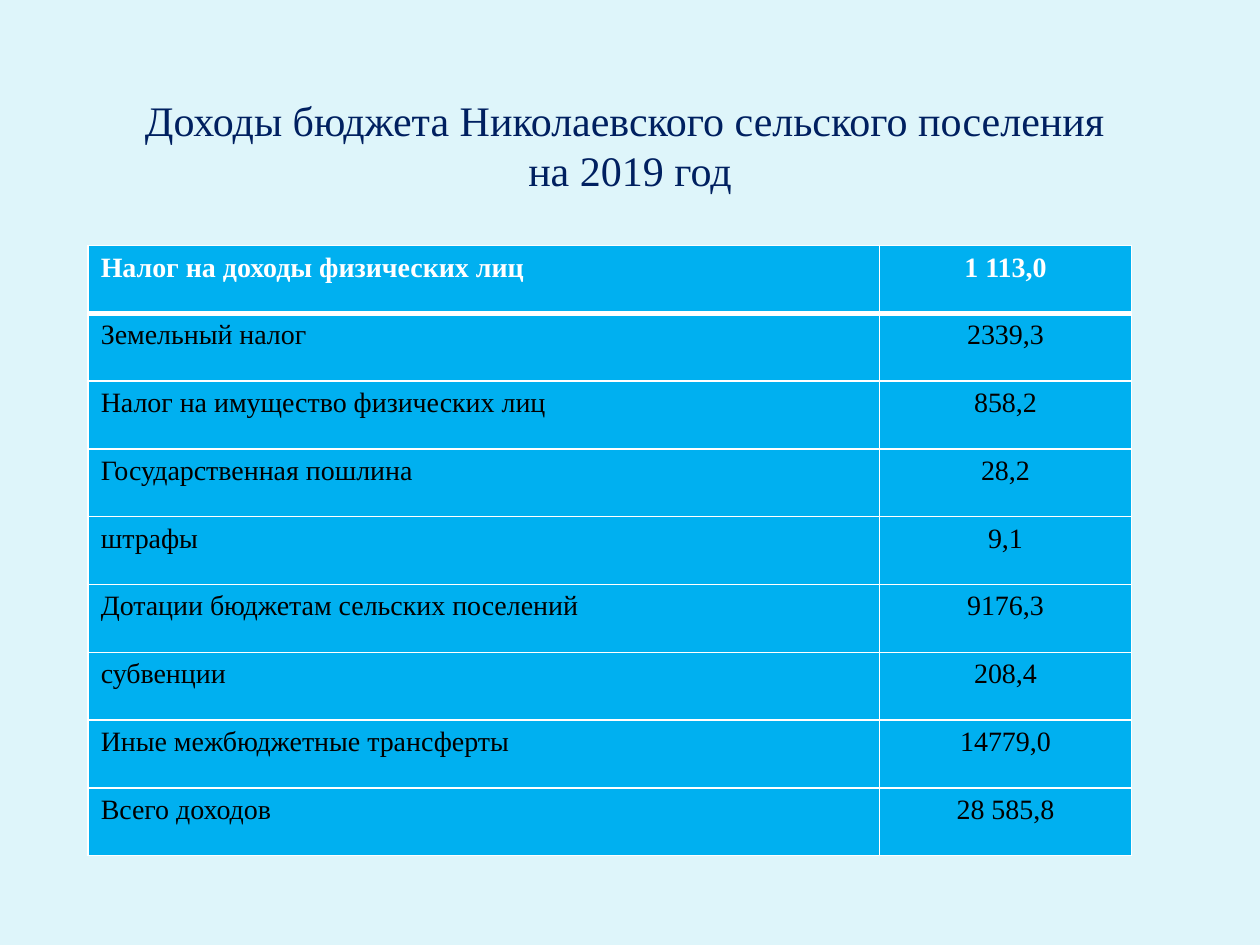
"""Build a slide with the 2019 budget revenue table of a rural settlement."""
from typing import NamedTuple

from lxml.etree import SubElement
from pptx import Presentation
from pptx.dml.color import RGBColor
from pptx.enum.text import MSO_ANCHOR, PP_ALIGN as Align
from pptx.oxml.ns import qn
from pptx.slide import Slide
from pptx.table import _Cell as Cell
from pptx.util import Inches, Pt

BACKGROUND = RGBColor(0xDE, 0xF5, 0xFA)
NAVY = RGBColor(0x00, 0x20, 0x60)
BLUE = RGBColor(0x00, 0xB0, 0xF0)
WHITE = RGBColor(0xFF, 0xFF, 0xFF)
BLACK = RGBColor(0x00, 0x00, 0x00)
FONT = "Times New Roman"
ROW_HEIGHT = 0.538
COLUMN_WIDTHS = (6.28, 2.0)
THIN, THICK = Pt(1), Pt(3)


class Revenue(NamedTuple):
    name: str
    amount: str


TITLE = ("Доходы бюджета Николаевского сельского поселения ", "на 2019 год")
REVENUES = (
    Revenue("Налог на доходы физических лиц", "1 113,0"),
    Revenue("Земельный налог", "2339,3"),
    Revenue("Налог на имущество физических лиц", "858,2"),
    Revenue("Государственная пошлина", "28,2"),
    Revenue("штрафы", "9,1"),
    Revenue("Дотации бюджетам сельских поселений", "9176,3"),
    Revenue("субвенции", "208,4"),
    Revenue("Иные межбюджетные трансферты", "14779,0"),
    Revenue("Всего доходов", "28 585,8"),
)


def add_title(slide: Slide) -> None:
    box = slide.shapes.add_textbox(Inches(0.78), Inches(0.7), Inches(8.44), Inches(6.56))
    frame = box.text_frame
    frame.word_wrap = True
    frame.vertical_anchor = MSO_ANCHOR.TOP
    frame.text = "\n".join(TITLE)
    for paragraph in frame.paragraphs:
        paragraph.alignment = Align.CENTER
        paragraph.font.name = FONT
        paragraph.font.size = Pt(24)
        paragraph.font.color.rgb = NAVY


def set_borders(cell: Cell, top: int, bottom: int) -> None:
    properties = cell._tc.get_or_add_tcPr()
    for side, width in (("L", THIN), ("R", THIN), ("T", top), ("B", bottom)):
        line = SubElement(properties, qn(f"a:ln{side}"), w=str(width))
        fill = SubElement(line, qn("a:solidFill"))
        SubElement(fill, qn("a:srgbClr"), val=str(WHITE))


def fill_cell(cell: Cell, text: str, row: int, alignment: Align) -> None:
    set_borders(cell, THICK if row == 1 else THIN, THICK if row == 0 else THIN)
    cell.fill.solid()
    cell.fill.fore_color.rgb = BLUE
    cell.text = text
    paragraph = cell.text_frame.paragraphs[0]
    paragraph.alignment = alignment
    paragraph.font.name = FONT
    paragraph.font.size = Pt(16)
    paragraph.font.bold = row == 0
    paragraph.font.color.rgb = WHITE if row == 0 else BLACK


def add_revenue_table(slide: Slide) -> None:
    table = slide.shapes.add_table(
        len(REVENUES), len(COLUMN_WIDTHS), Inches(0.7), Inches(1.95),
        Inches(sum(COLUMN_WIDTHS)), Inches(ROW_HEIGHT * len(REVENUES)),
    ).table
    for column, width in zip(table.columns, COLUMN_WIDTHS):
        column.width = Inches(width)
    for row, revenue in enumerate(REVENUES):
        fill_cell(table.cell(row, 0), revenue.name, row, Align.LEFT)
        fill_cell(table.cell(row, 1), revenue.amount, row, Align.CENTER)


def main() -> None:
    presentation = Presentation()
    presentation.slide_width, presentation.slide_height = Inches(10), Inches(7.5)
    slide = presentation.slides.add_slide(presentation.slide_layouts[6])
    slide.background.fill.solid()
    slide.background.fill.fore_color.rgb = BACKGROUND
    add_title(slide)
    add_revenue_table(slide)
    presentation.save("out.pptx")


if __name__ == "__main__":
    main()
